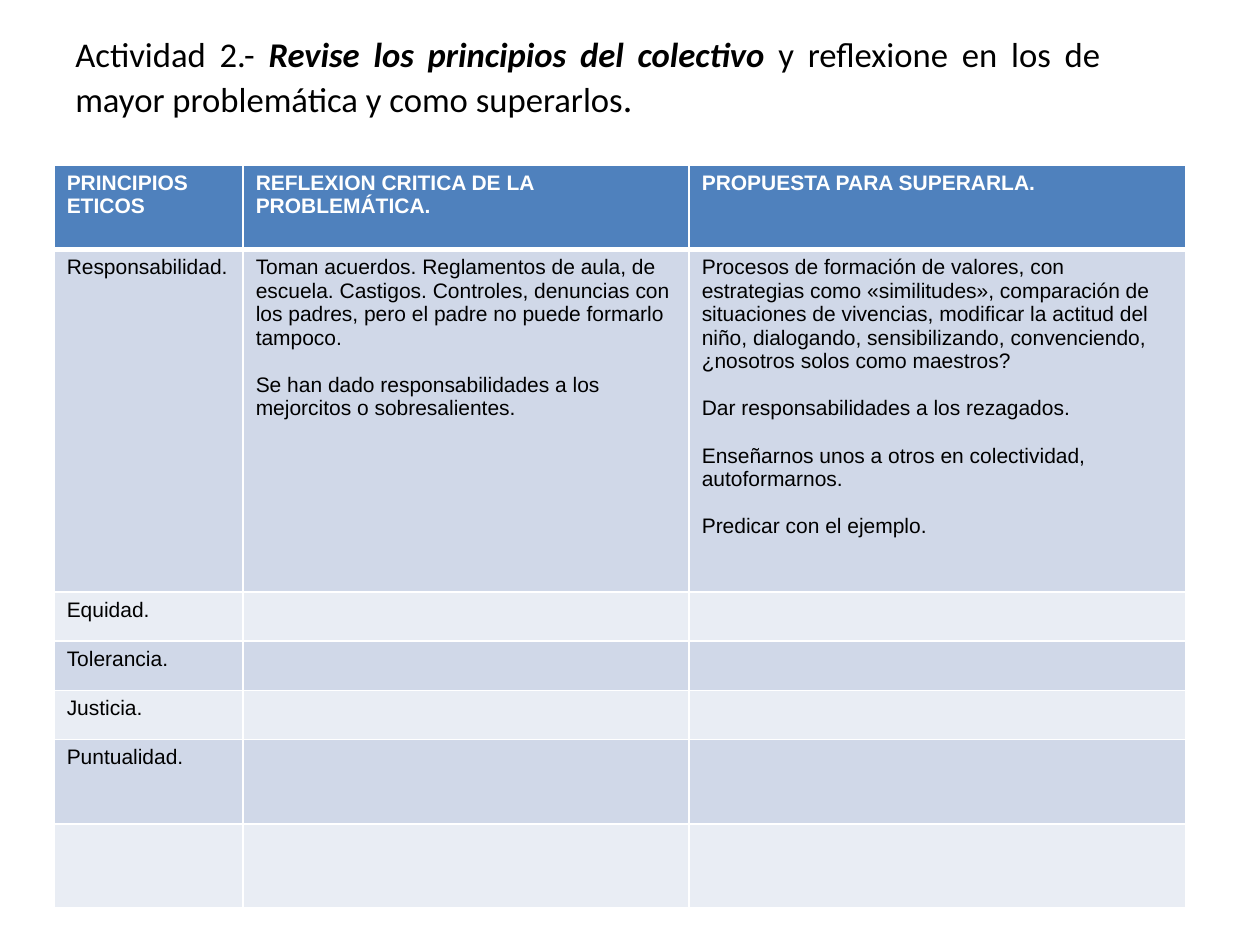
from lxml.etree import SubElement
from pptx import Presentation
from pptx.dml.color import RGBColor
from pptx.enum.text import MSO_ANCHOR, PP_ALIGN
from pptx.oxml.ns import qn
from pptx.util import Inches, Pt

BLACK = RGBColor(0x00, 0x00, 0x00)
WHITE = RGBColor(0xFF, 0xFF, 0xFF)
HEADER_BLUE = RGBColor(0x4F, 0x81, 0xBD)
BAND_DARK = RGBColor(0xD0, 0xD8, 0xE8)
BAND_LIGHT = RGBColor(0xE9, 0xED, 0xF4)


def write(paragraph, text, font="Arial", size=12, color=BLACK, bold=False, italic=False):
    run = paragraph.add_run()
    run.text = text
    run.font.name = font
    run.font.size = Pt(size)
    run.font.color.rgb = color
    run.font.bold = bold
    run.font.italic = italic


def add_borders(cell, bottom_width, top_width):
    properties = cell._tc.get_or_add_tcPr()
    widths = {"lnL": 1, "lnR": 1, "lnT": top_width, "lnB": bottom_width}
    for side, width in widths.items():
        line = SubElement(properties, qn(f"a:{side}"), w=str(Pt(width)))
        fill = SubElement(line, qn("a:solidFill"))
        SubElement(fill, qn("a:srgbClr"), val=str(WHITE))


presentation = Presentation()
presentation.slide_width = Inches(10)
presentation.slide_height = Inches(7.5)
slide = presentation.slides.add_slide(presentation.slide_layouts[6])

# Activity heading
heading = slide.shapes.add_textbox(Inches(0.5), Inches(0.3), Inches(8.33), Inches(0.61)).text_frame
heading.word_wrap = True
heading.vertical_anchor = MSO_ANCHOR.MIDDLE
instruction = heading.paragraphs[0]
instruction.alignment = PP_ALIGN.JUSTIFY
write(instruction, "Actividad 2.- ", font="Calibri", size=19.8)
write(instruction, "Revise los principios del colectivo ", font="Calibri", size=19.8, bold=True, italic=True)
write(instruction, "y reflexione en los de mayor problemática y como superarlos", font="Calibri", size=19.8)
write(instruction, ". ", font="Calibri", size=21.6)

# Table content: each cell is a list of blocks, each block a list of paragraphs
reflection = [
    ["Toman acuerdos. Reglamentos de aula, de escuela. Castigos. Controles, denuncias con "
     "los padres, pero el padre no puede formarlo tampoco."],
    ["Se han dado responsabilidades a los mejorcitos o sobresalientes."],
]
proposal = [
    ["Procesos de formación de valores, con estrategias como «similitudes», comparación de "
     "situaciones de vivencias, modificar la actitud del niño, dialogando, sensibilizando, "
     "convenciendo,",
     "¿nosotros solos como maestros?"],
    ["Dar responsabilidades a los rezagados."],
    ["Enseñarnos unos a otros en colectividad, autoformarnos."],
    ["Predicar con el ejemplo."],
]
rows = [
    [[["PRINCIPIOS ETICOS"]], [["REFLEXION CRITICA DE LA PROBLEMÁTICA."]],
     [["PROPUESTA PARA SUPERARLA."]]],
    [[["Responsabilidad."]], reflection, proposal],
]
rows += [[[[principle]], [], []] for principle in ("Equidad.", "Tolerancia.", "Justicia.", "Puntualidad.")]
rows.append([[], [], []])
column_widths = [1.5, 3.54, 3.94]
row_heights = [0.67, 2.72, 0.39, 0.39, 0.39, 0.67, 0.67]

# Principles table
principles = slide.shapes.add_table(
    len(rows), len(column_widths), Inches(0.43), Inches(1.31),
    Inches(sum(column_widths)), Inches(sum(row_heights))).table
for column, width in zip(principles.columns, column_widths):
    column.width = Inches(width)

for r, (row, height) in enumerate(zip(rows, row_heights)):
    principles.rows[r].height = Inches(height)
    is_header = r == 0
    band = HEADER_BLUE if is_header else BAND_DARK if r % 2 else BAND_LIGHT
    for c, blocks in enumerate(row):
        cell = principles.cell(r, c)
        add_borders(cell, bottom_width=3 if is_header else 1, top_width=3 if r == 1 else 1)
        cell.fill.solid()
        cell.fill.fore_color.rgb = band
        if not blocks:
            # Keep empty cells from stretching the short rows
            cell.margin_top = cell.margin_bottom = 0
        for b, block in enumerate(blocks):
            for p, text in enumerate(block):
                first = b == p == 0
                paragraph = cell.text_frame.paragraphs[0] if first else cell.text_frame.add_paragraph()
                if b and p == 0:
                    paragraph.space_before = Pt(13.5)
                write(paragraph, text, color=WHITE if is_header else BLACK, bold=is_header)

presentation.save("out.pptx")
